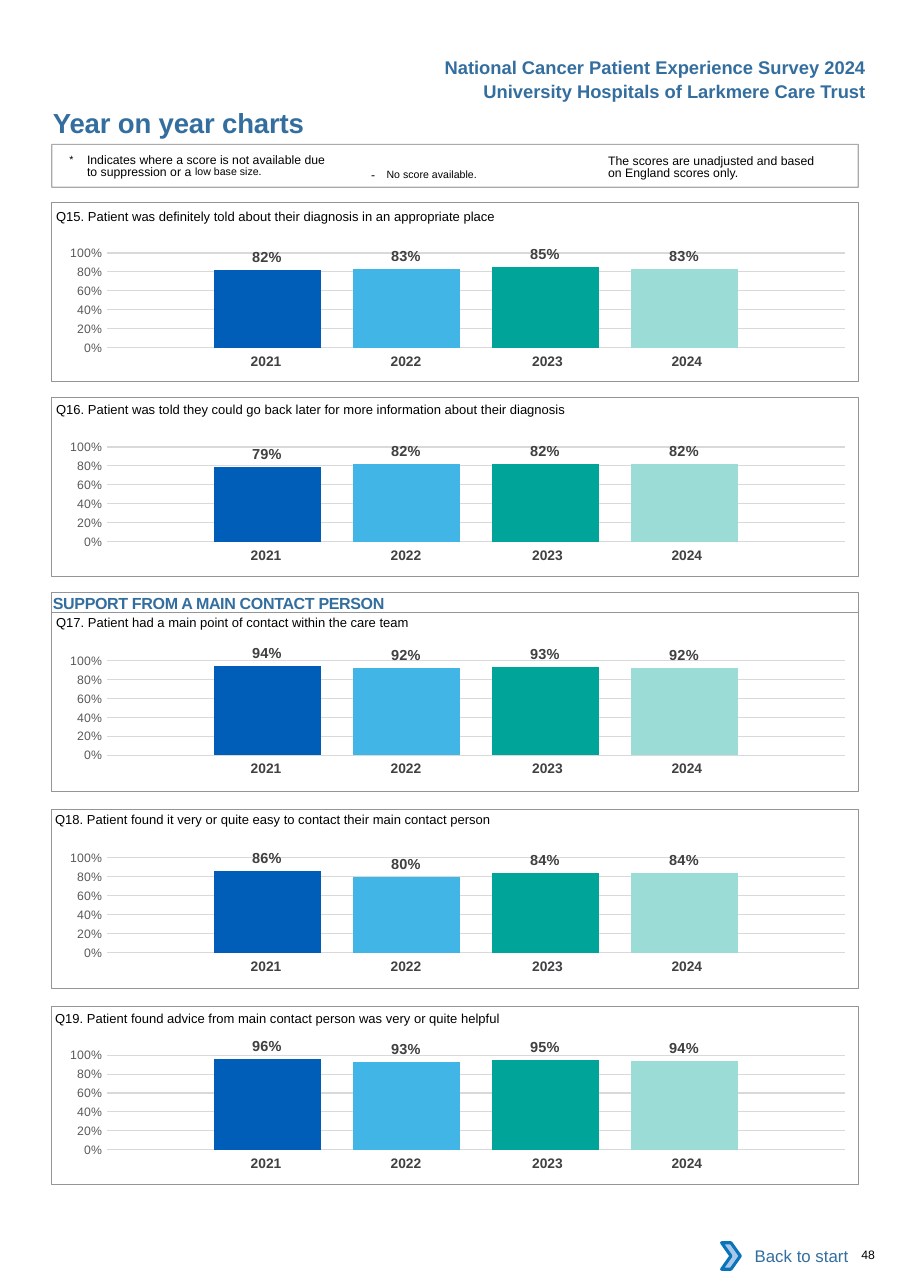
from lxml import etree
from pptx import Presentation
from pptx import util as u
from pptx.chart import data
from pptx.dml import color
from pptx.enum import chart as charts, shapes, text
from pptx.oxml import ns

PX = 9144
COLORS = {
    "heading": "336E9F", "ink": "000000", "frame": "939598", "year": "414042",
    "label": "404040", "axis": "595959", "grid": "D9D9D9", "white": "FFFFFF",
    "arrow": "A8C7E9", "arrow edge": "0A74BB",
}
YEARS = {"2021": "005EB8", "2022": "41B6E6", "2023": "00A499", "2024": "9CDCD7"}
YEAR_WIDTHS = [127, 127, 134, 127]
YEAR_RIGHT_MARGINS = [0, 0, 4, 12]
PLOT = {"layoutTarget": "inner", "xMode": "edge", "yMode": "edge",
        "x": "0.079", "y": "0.145", "w": "0.915", "h": "0.666"}
QUESTIONS = [
    ("Q15. Patient was definitely told about their diagnosis in an appropriate place",
     180, 184, 211, 1, [0.82, 0.83, 0.85, 0.83]),
    ("Q16. Patient was told they could go back later for more information about their diagnosis",
     355, 361, 387, 1, [0.79, 0.82, 0.82, 0.82]),
    ("Q17. Patient had a main point of contact within the care team",
     549, 556, 581, 1, [0.94, 0.92, 0.93, 0.92]),
    ("Q18. Patient found it very or quite easy to contact their main contact person",
     728, 735, 760, 0, [0.86, 0.80, 0.84, 0.84]),
    ("Q19. Patient found advice from main contact person was very or quite helpful",
     908, 913, 939, 0, [0.96, 0.93, 0.95, 0.94]),
]


def rgb(name):
    return color.RGBColor.from_string(COLORS.get(name, name))


def write(shape, runs, size, ink="ink", bold=False, insets=(0, 0, 0, 0),
          align=text.PP_ALIGN.LEFT, wrap=True, anchor=text.MSO_ANCHOR.TOP):
    frame = shape.text_frame
    frame.word_wrap = wrap
    frame.auto_size = text.MSO_AUTO_SIZE.NONE
    frame.vertical_anchor = anchor
    frame.margin_left, frame.margin_top, frame.margin_right, frame.margin_bottom = [
        inset * PX for inset in insets]
    line = frame.paragraphs[0]
    line.alignment = align
    line.font.name = "Arial"
    line.font.size = u.Pt(size)
    line.font.bold = bold
    line.font.color.rgb = rgb(ink)
    for words, changes in runs:
        run = line.add_run()
        run.text = words
        if "sz" in changes:
            run.font.size = u.Pt(changes["sz"])
        for key in ("spc", "baseline"):
            if key in changes:
                run._r.get_or_add_rPr().set(key, str(changes[key]))
    return line


deck = Presentation()
deck.slide_width, deck.slide_height = 826 * PX, 1169 * PX
page = deck.slides.add_slide(deck.slide_layouts[5])
items = page.shapes

title = items.title
title.left, title.top, title.width, title.height = 47 * PX, 96 * PX, 450 * PX, 30 * PX
write(title, [("Year on year charts", {"spc": -10})], 18, "heading", True, (1, 0, 0, 0))

page_number = items.add_textbox(772 * PX, 1132 * PX, 51 * PX, 13 * PX)
write(page_number, [("48", {})], 8, insets=(10, 0, 0, 0))

for question, question_top, frame_top, chart_top, indent, scores in QUESTIONS:
    years = items.add_table(1, 4, 173 * PX, (chart_top + 105) * PX, 515 * PX, 27 * PX).table
    years.first_row = years.horz_banding = False
    for column, (year, width, margin) in enumerate(zip(YEARS, YEAR_WIDTHS, YEAR_RIGHT_MARGINS)):
        years.columns[column].width = width * PX
        cell = years.cell(0, column)
        cell.fill.background()
        cell.margin_left, cell.margin_right = 10 * PX, margin * PX
        cell.margin_top = cell.margin_bottom = 5 * PX
        cell.text = year
        year_line = cell.text_frame.paragraphs[0]
        year_line.alignment = text.PP_ALIGN.CENTER
        year_line.font.name, year_line.font.size, year_line.font.bold = "Arial", u.Pt(9), True
        year_line.font.color.rgb = rgb("year")

    score_data = data.CategoryChartData(number_format="0%")
    score_data.categories = ["1"]
    for number, score in enumerate(scores, 1):
        score_data.add_series(f"Series {number}", [score])
    chart = items.add_chart(charts.XL_CHART_TYPE.COLUMN_CLUSTERED, 39 * PX,
                            chart_top * PX, 732 * PX, 129 * PX, score_data).chart
    chart.has_legend = False
    chart.has_title = False
    chart.font.name, chart.font.size = "Calibri", u.Pt(10)
    chart.font.color.rgb = rgb("ink")
    chart.category_axis.visible = False
    percent = chart.value_axis
    percent.minimum_scale, percent.maximum_scale, percent.major_unit = 0, 1, 0.2
    percent.major_tick_mark = charts.XL_TICK_MARK.NONE
    percent.format.line.fill.background()
    percent.major_gridlines.format.line.color.rgb = rgb("grid")
    percent.major_gridlines.format.line.width = u.Pt(0.75)
    percent.tick_labels.number_format = "0%"
    percent.tick_labels.number_format_is_linked = False
    percent.tick_labels.font.name = "Arial"
    percent.tick_labels.font.size = u.Pt(8)
    percent.tick_labels.font.color.rgb = rgb("axis")
    bars = chart.plots[0]
    bars.gap_width, bars.overlap, bars.vary_by_categories = 200, -30, False
    for bar, shade in zip(bars.series, YEARS.values()):
        bar.format.fill.solid()
        bar.format.fill.fore_color.rgb = rgb(shade)
        labels = bar.data_labels
        labels.show_value = True
        labels.position = charts.XL_LABEL_POSITION.OUTSIDE_END
        labels.number_format, labels.number_format_is_linked = "0%", False
        labels.font.name, labels.font.size, labels.font.bold = "Arial", u.Pt(9.5), True
        labels.font.color.rgb = rgb("label")

    plot_area = chart.element.find(".//" + ns.qn("c:plotArea"))
    for old_layout in plot_area.findall(ns.qn("c:layout")):
        plot_area.remove(old_layout)
    layout = etree.Element(ns.qn("c:layout"))
    manual = etree.SubElement(layout, ns.qn("c:manualLayout"))
    for key, value in PLOT.items():
        etree.SubElement(manual, ns.qn("c:" + key)).set("val", value)
    plot_area.insert(0, layout)
    clear = etree.Element(ns.qn("c:spPr"))
    etree.SubElement(clear, ns.qn("a:noFill"))
    etree.SubElement(etree.SubElement(clear, ns.qn("a:ln")), ns.qn("a:noFill"))
    chart.element.find(ns.qn("c:chart")).addnext(clear)

    asked = items.add_textbox(50 * PX, question_top * PX, 544 * PX, 24 * PX)
    write(asked, [(question, {})], 8.5, insets=(indent, 9, 0, 0))

outlines = {}
for top, height, weight in [(entry[2], 162, 0.5) for entry in QUESTIONS] + [
        (538, 18, 0.5), (131, 39, 0.75)]:
    outline = items.add_shape(shapes.MSO_SHAPE.RECTANGLE, 47 * PX, top * PX, 732 * PX, height * PX)
    outline.shadow.inherit = False
    outline.fill.background()
    outline.line.color.rgb = rgb("frame")
    outline.line.width = u.Pt(weight)
    outlines[top] = outline

write(outlines[538], [("SUPPORT FROM A MAIN CONTACT PERSON", {"spc": -20})], 10.5,
      "heading", True, (1, 1, 0, 0))
legend_color = outlines[131].line._ln.find(".//" + ns.qn("a:srgbClr"))
etree.SubElement(legend_color, ns.qn("a:alpha")).set("val", "80000")

unadjusted = items.add_textbox(552 * PX, 138 * PX, 201 * PX, 27 * PX)
unadjusted_line = write(unadjusted, [
    ("The scores are unadjusted and based on England scores only.", {})], 8, insets=(0, 3, 0, 0))
unadjusted_line.line_spacing = u.Pt(8.1)

no_score = items.add_textbox(327 * PX, 141 * PX, 183 * PX, 24 * PX)
write(no_score, [("- ", {"spc": 260}), ("No score available.", {"sz": 12, "baseline": 3000})],
      8, insets=(10, 5, 10, 5))

suppressed = items.add_textbox(63 * PX, 138 * PX, 238 * PX, 27 * PX)
suppressed_line = write(suppressed, [
    ("*\t", {"sz": 12, "baseline": 3000}),
    ("Indicates where a score is not available due to suppression or a ", {}),
    ("low base size.", {"sz": 12, "baseline": 7000})], 8, insets=(0, 3, 0, 0))
suppressed_line.line_spacing = u.Pt(8.1)
hanging = suppressed_line._p.get_or_add_pPr()
hanging.set("marL", str(16 * PX))
hanging.set("indent", str(-16 * PX))

for heading, left, top, width in [
        ("University Hospitals of Larkmere Care Trust", 428, 68, 368),
        ("National Cancer Patient Experience Survey 2024", 392, 46, 404)]:
    header = items.add_textbox(left * PX, top * PX, width * PX, 30 * PX)
    write(header, [(heading, {})], 12, "heading", True, (10, 5, 10, 5),
          text.PP_ALIGN.RIGHT, False)

back = items.add_shape(shapes.MSO_SHAPE.RECTANGLE, 662 * PX, 1119 * PX, 118 * PX, 42 * PX)
back.shadow.inherit = False
back.fill.solid()
back.fill.fore_color.rgb = rgb("white")
back.line.fill.background()
write(back, [("Back to start", {})], 11, "heading", False, (10, 5, 10, 5),
      text.PP_ALIGN.RIGHT, True, text.MSO_ANCHOR.MIDDLE)

arrow = items.add_shape(shapes.MSO_SHAPE.CHEVRON, 655 * PX, 1128 * PX, 17 * PX, 24 * PX)
arrow.shadow.inherit = False
arrow.fill.solid()
arrow.fill.fore_color.rgb = rgb("arrow")
arrow.line.color.rgb = rgb("arrow edge")
arrow.line.width = u.Pt(2)

deck.save("out.pptx")
